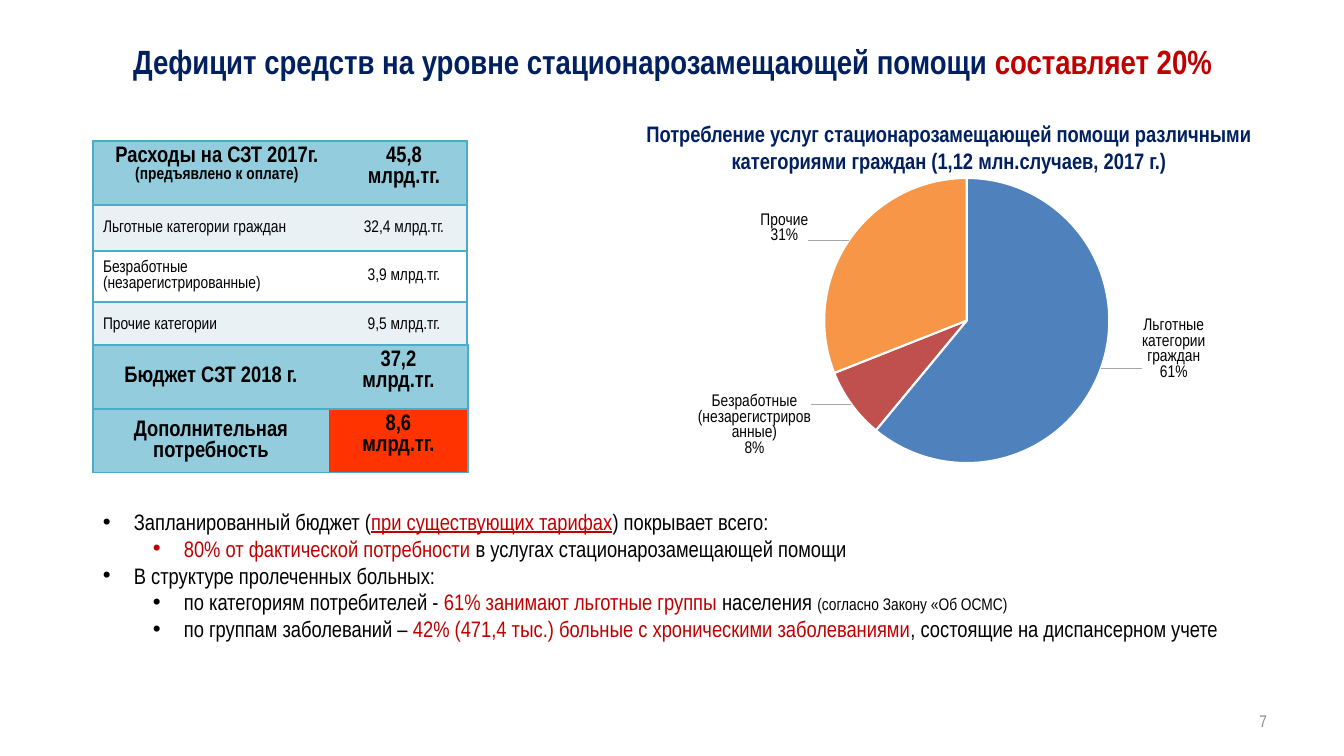
from lxml import etree
from pptx import Presentation
from pptx import util as u
from pptx.chart.data import CategoryChartData
from pptx.dml.color import RGBColor
from pptx.enum import chart as charts, text
from pptx.oxml import parse_xml
from pptx.oxml.ns import nsdecls, qn

EMU_PER_PX = 914400 / 100.8


class Theme:
    font = "Arial Narrow"
    navy, red, black, gray = "002060", "C00000", "000000", "8C8C8C"
    head, tint, white, alarm, border = "93CDDD", "E9F1F5", "FFFFFF", "FF3300", "4BACC6"
    leader = "A6A6A6"
    slices = ["4F81BD", "C0504D", "F79646"]
    title, body, small = 24, 16, 12


# Content: a run is (text, colour, size, bold, underline), trailing items optional
TITLE = [("Дефицит средств на уровне стационарозамещающей помощи", Theme.navy, Theme.title, True),
         (" составляет 20%", Theme.red, Theme.title, True)]
CHART_TITLE = [("Потребление услуг стационарозамещающей помощи различными категориями граждан "
                "(1,12 млн.случаев, 2017 г.)", Theme.navy, Theme.body, True)]
PAGE = [("7", Theme.gray, Theme.small)]

# A row is (height, left lines, right lines, left fill, right fill, is heading)
TABLES = [
    {"top": 141, "columns": (248, 126), "rows": [
        (64, ["Расходы на СЗТ 2017г.", "(предъявлено к оплате)"], ["45,8 млрд.тг."],
         Theme.head, Theme.head, True),
        (46, ["Льготные категории граждан"], ["32,4 млрд.тг."], Theme.tint, Theme.tint, False),
        (51, ["Безработные (незарегистрированные)"], ["3,9 млрд.тг."],
         Theme.white, Theme.white, False),
        (46, ["Прочие категории"], ["9,5 млрд.тг."], Theme.tint, Theme.tint, False)]},
    {"top": 345, "columns": (236, 139), "rows": [
        (52, ["Бюджет СЗТ 2018 г."], ["37,2", "млрд.тг."], Theme.head, Theme.head, True)]},
    {"top": 409, "columns": (236, 139), "rows": [
        (52, ["Дополнительная потребность"], ["8,6", "млрд.тг."],
         Theme.head, Theme.alarm, True)]},
]

# A slice is (category, percent, label shift as a share of the chart)
SLICES = [("Льготные категории граждан", 61, (0.06, -0.15)),
          ("Безработные (незарегистрированные)", 8, (-0.06, -0.04)),
          ("Прочие", 31, (-0.06, 0.02))]

BULLETS = [
    (0, [("Запланированный бюджет (",),
         ("при существующих тарифах", Theme.red, Theme.body, False, True),
         (") покрывает всего:",)]),
    (1, [("80% от фактической потребности ", Theme.red),
         ("в услугах стационарозамещающей помощи",)]),
    (0, [("В структуре пролеченных больных:",)]),
    (1, [("по категориям потребителей - ",), ("61% занимают льготные группы ", Theme.red),
         ("населения ",), ("(согласно Закону «Об ОСМС)", Theme.black, Theme.small)]),
    (1, [("по группам заболеваний – ",),
         ("42% (471,4 тыс.) больные с хроническими заболеваниями", Theme.red),
         (", состоящие на диспансерном учете",)]),
]


def px(length):
    return u.Emu(round(length * EMU_PER_PX))


def add_runs(paragraph, runs, align):
    paragraph.alignment = align
    for item in runs:
        add_run(paragraph, *item)


def add_run(paragraph, words, color=Theme.black, size=Theme.body, bold=False, underline=False):
    run = paragraph.add_run()
    run.text = words
    font = run.font
    font.name, font.size, font.bold, font.underline = Theme.font, u.Pt(size), bold, underline
    font.color.rgb = RGBColor.from_string(color)


def add_textbox(slide, box, paragraphs, align, anchor=text.MSO_ANCHOR.TOP):
    frame = slide.shapes.add_textbox(*map(px, box)).text_frame
    frame.word_wrap, frame.vertical_anchor = True, anchor
    for index, runs in enumerate(paragraphs):
        paragraph = frame.add_paragraph() if index else frame.paragraphs[0]
        add_runs(paragraph, runs, align)
    return frame


def set_bullet(paragraph, level):
    paragraph.level = level
    properties = paragraph._p.get_or_add_pPr()
    properties.set("marL", str(px(31 + 50 * level)))
    properties.set("indent", str(-px(31)))
    etree.SubElement(properties, qn("a:buFont"), typeface="Arial")
    etree.SubElement(properties, qn("a:buChar"), char="•")


def set_borders(cell, sides):
    properties = cell._tc.get_or_add_tcPr()
    for position, side in enumerate(("L", "R", "T", "B")):
        paint = (f'<a:solidFill><a:srgbClr val="{Theme.border}"/></a:solidFill>'
                 if side in sides else "<a:noFill/>")
        properties.insert(position, parse_xml(
            f'<a:ln{side} {nsdecls("a")} w="12700">{paint}</a:ln{side}>'))


def add_table(slide, top, columns, rows):
    height = sum(row[0] for row in rows)
    table = slide.shapes.add_table(len(rows), 2, px(93), px(top), px(sum(columns)), px(height)).table
    for column, width in zip(table.columns, columns):
        column.width = px(width)
    for r, (row_height, left, right, left_fill, right_fill, heading) in enumerate(rows):
        table.rows[r].height = px(row_height)
        for c, (lines, fill) in enumerate(((left, left_fill), (right, right_fill))):
            cell = table.cell(r, c)
            cell.fill.solid()
            cell.fill.fore_color.rgb = RGBColor.from_string(fill)
            at_top = heading and (c == 1 or len(lines) > 1)
            cell.vertical_anchor = text.MSO_ANCHOR.TOP if at_top else text.MSO_ANCHOR.MIDDLE
            set_borders(cell, "RTB" if c else "LTB")
            align = text.PP_ALIGN.CENTER if heading or c else text.PP_ALIGN.LEFT
            for index, line in enumerate(lines):
                paragraph = cell.text_frame.add_paragraph() if index else cell.text_frame.paragraphs[0]
                size = Theme.body if heading and not line.startswith("(") else Theme.small
                add_runs(paragraph, [(line, Theme.black, size, heading)], align)


def layout_xml(**places):
    items = "".join(f'<c:{name} val="{value}"/>' for name, value in places.items())
    return f'<c:layout {nsdecls("c")}><c:manualLayout>{items}</c:manualLayout></c:layout>'


def add_pie(slide, box):
    data = CategoryChartData()
    data.categories = [name for name, _, _ in SLICES]
    data.add_series("Series 1", [value for _, value, _ in SLICES])
    chart = slide.shapes.add_chart(charts.XL_CHART_TYPE.PIE, *map(px, box), data).chart
    chart.has_legend = chart.has_title = False
    chart.font.name, chart.font.size = Theme.font, u.Pt(Theme.small)
    chart.font.color.rgb = RGBColor.from_string(Theme.black)
    plot = chart.plots[0]
    plot.vary_by_categories = True
    series = plot.series[0]
    for index, color in enumerate(Theme.slices):
        style = series.points[index].format
        style.fill.solid()
        style.fill.fore_color.rgb = RGBColor.from_string(color)
        style.line.color.rgb = RGBColor.from_string(Theme.white)
        style.line.width = u.Pt(1.5)

    # Category and percent labels, shifted off the pie
    show = ('<c:numFmt formatCode="0%" sourceLinked="0"/><c:dLblPos val="outEnd"/>'
            '<c:showLegendKey val="0"/><c:showVal val="0"/><c:showCatName val="1"/>'
            '<c:showSerName val="0"/><c:showPercent val="1"/><c:showBubbleSize val="0"/>'
            '<c:separator>\n</c:separator>')
    labels = "".join(f'<c:dLbl><c:idx val="{index}"/>{layout_xml(x=x, y=y)}{show}</c:dLbl>'
                     for index, (_, _, (x, y)) in enumerate(SLICES))
    leaders = ('<c:showLeaderLines val="1"/><c:leaderLines><c:spPr><a:ln w="9525"><a:solidFill>'
               f'<a:srgbClr val="{Theme.leader}"/></a:solidFill></a:ln></c:spPr></c:leaderLines>')
    series._element.find(qn("c:cat")).addprevious(parse_xml(
        f'<c:dLbls {nsdecls("c", "a")}>{labels}{show}{leaders}</c:dLbls>'))

    # Pie area inside the chart
    area = chart._chartSpace.chart.plotArea
    for layout in area.findall(qn("c:layout")):
        area.remove(layout)
    area.insert(0, parse_xml(layout_xml(layoutTarget="inner", xMode="edge", yMode="edge",
                                        x=0.29, y=0.05, w=0.48, h=0.81)))


def main():
    presentation = Presentation()
    presentation.slide_width, presentation.slide_height = px(1344), px(756)
    slide = presentation.slides.add_slide(presentation.slide_layouts[6])
    center, middle = text.PP_ALIGN.CENTER, text.MSO_ANCHOR.MIDDLE

    add_textbox(slide, (93, 40, 1159, 42), [TITLE], center, middle)
    add_textbox(slide, (964, 701, 313, 40), [PAGE], text.PP_ALIGN.RIGHT, middle)
    add_pie(slide, (652, 160, 594, 353))
    add_textbox(slide, (613, 115, 672, 65), [CHART_TITLE], center)
    for table in TABLES:
        add_table(slide, **table)

    # Conclusions
    frame = add_textbox(slide, (93, 503, 1154, 146), [runs for _, runs in BULLETS],
                        text.PP_ALIGN.LEFT)
    for paragraph, (level, _) in zip(frame.paragraphs, BULLETS):
        set_bullet(paragraph, level)
    presentation.save("out.pptx")


if __name__ == "__main__":
    main()
